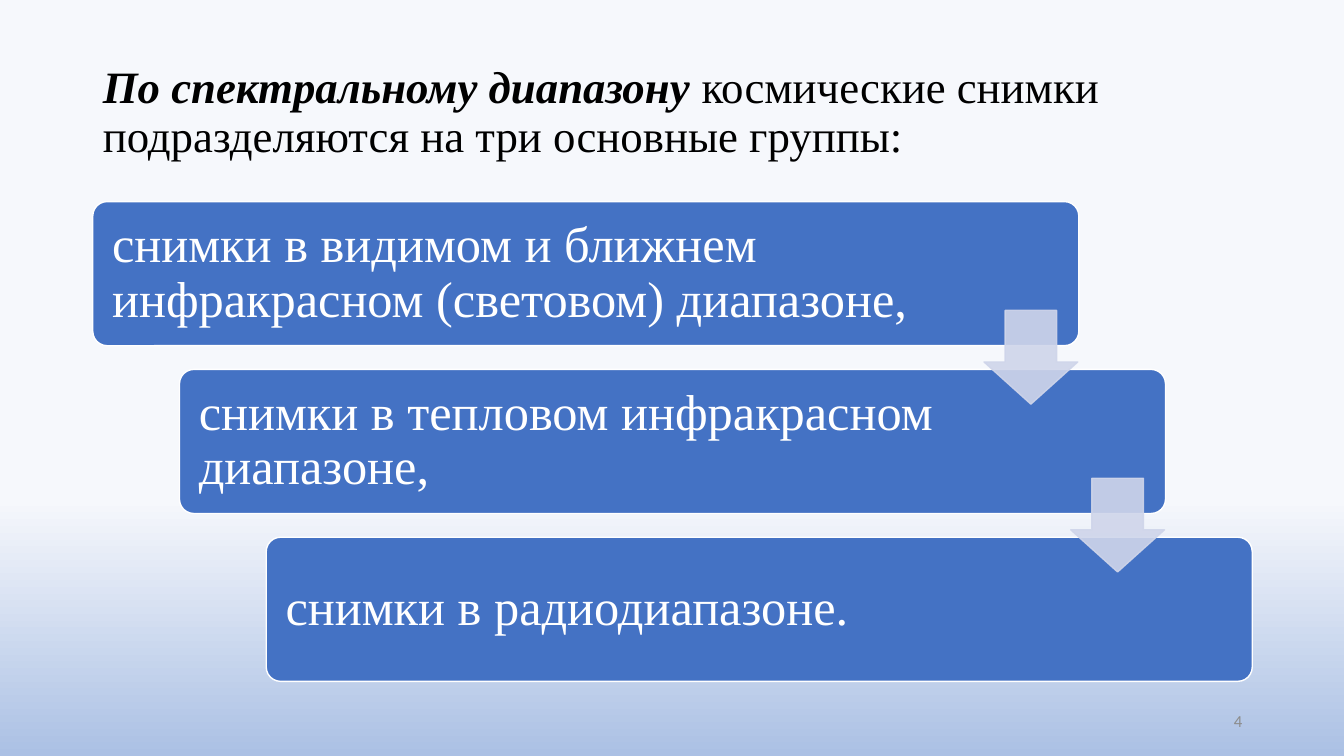
from lxml import etree
from pptx import Presentation
from pptx.dml.color import RGBColor
from pptx.enum.shapes import MSO_SHAPE
from pptx.enum.text import MSO_ANCHOR, MSO_AUTO_SIZE, PP_ALIGN
from pptx.oxml.ns import qn
from pptx.util import Inches, Pt

ROUND, DOWN = MSO_SHAPE.ROUNDED_RECTANGLE, MSO_SHAPE.DOWN_ARROW
LEFT, RIGHT = PP_ALIGN.LEFT, PP_ALIGN.RIGHT
MIDDLE, NO_FIT = MSO_ANCHOR.MIDDLE, MSO_AUTO_SIZE.NONE
SERIF, SANS = "Times New Roman", "Calibri"
BLACK, WHITE, GRAY = "000000", "FFFFFF", "8C8C8C"
BLUE, PALE = "4472C4", "CFD5EA"


def color(text):
    return RGBColor.from_string(text)


def write(para, text, font=SERIF, size=32, ink=BLACK, strong=False,
          align=LEFT, spacing=0.9):
    para.alignment = align
    para.line_spacing = spacing
    run = para.add_run()
    run.text = text
    run.font.name = font
    run.font.size = Pt(size)
    run.font.color.rgb = color(ink)
    run.font.bold = run.font.italic = strong


class Page:
    def __init__(self, deck):
        self.slide = deck.slides.add_slide(deck.slide_layouts[5])
        self.shapes = self.slide.shapes

    def back(self, *stops):
        fill = self.slide.background.fill
        fill.gradient()
        fill.gradient_angle = 270
        for stop, (place, tone) in zip(fill.gradient_stops, stops):
            stop.position = place
            stop.color.rgb = color(tone)

    def title(self, lead, rest):
        title = self.shapes.title
        title.left, title.top = Inches(0.92), Inches(0.4)
        title.width, title.height = Inches(11.5), Inches(1.45)
        frame = title.text_frame
        frame.word_wrap = True
        frame.auto_size = NO_FIT
        frame.vertical_anchor = MIDDLE
        write(frame.paragraphs[0], lead, strong=True)
        write(frame.paragraphs[0], rest)

    def block(self, kind, x, y, w, h, tone, edge, adjust):
        shape = self.shapes.add_shape(
            kind, Inches(x), Inches(y), Inches(w), Inches(h))
        shape.shadow.inherit = False
        shape.fill.solid()
        shape.fill.fore_color.rgb = color(tone)
        shape.line.color.rgb = color(edge)
        shape.line.width = Pt(1)
        for i, value in enumerate(adjust):
            shape.adjustments[i] = value
        return shape

    def card(self, text, x, y, w, h):
        shape = self.block(ROUND, x, y, w, h, BLUE, WHITE, [0.1])
        frame = shape.text_frame
        frame.word_wrap = True
        frame.vertical_anchor = MIDDLE
        frame.margin_left = frame.margin_top = frame.margin_bottom = Inches(0.15)
        frame.margin_right = Inches(1.62)
        write(frame.paragraphs[0], text, size=36, ink=WHITE)

    def arrow(self, x, y, side):
        shape = self.block(DOWN, x, y, side, side, PALE, PALE, [0.55, 0.45])
        # 90 % opacity for fill and line
        for tone in shape.element.spPr.iter(qn("a:srgbClr")):
            etree.SubElement(tone, qn("a:alpha")).set("val", "90000")

    def number(self, text):
        box = self.shapes.add_textbox(
            Inches(9.42), Inches(6.95), Inches(3), Inches(0.4))
        frame = box.text_frame
        frame.word_wrap = True
        frame.vertical_anchor = MIDDLE
        write(frame.paragraphs[0], text, font=SANS, size=12, ink=GRAY,
              align=RIGHT, spacing=1.0)


def main():
    deck = Presentation()
    deck.slide_width, deck.slide_height = Inches(13.33), Inches(7.5)
    page = Page(deck)

    # Background and heading
    page.back((0.66, "F6F8FC"), (1, "ABC0E4"))
    page.title("По спектральному диапазону ",
               "космические снимки подразделяются на три основные группы:")

    # Staircase of groups
    groups = ["снимки в видимом и ближнем инфракрасном (световом) диапазоне,",
              "снимки в тепловом инфракрасном диапазоне,",
              "снимки в радиодиапазоне."]
    step_x, step_y = 0.86, 1.665
    for i, text in enumerate(groups):
        page.card(text, 0.92 + i * step_x, 2 + i * step_y, 9.78, 1.43)

    # Arrows between the steps
    for i in range(len(groups) - 1):
        page.arrow(9.76 + i * step_x, 3.08 + i * step_y, 0.93)

    page.number("4")
    deck.save("out.pptx")


if __name__ == "__main__":
    main()
